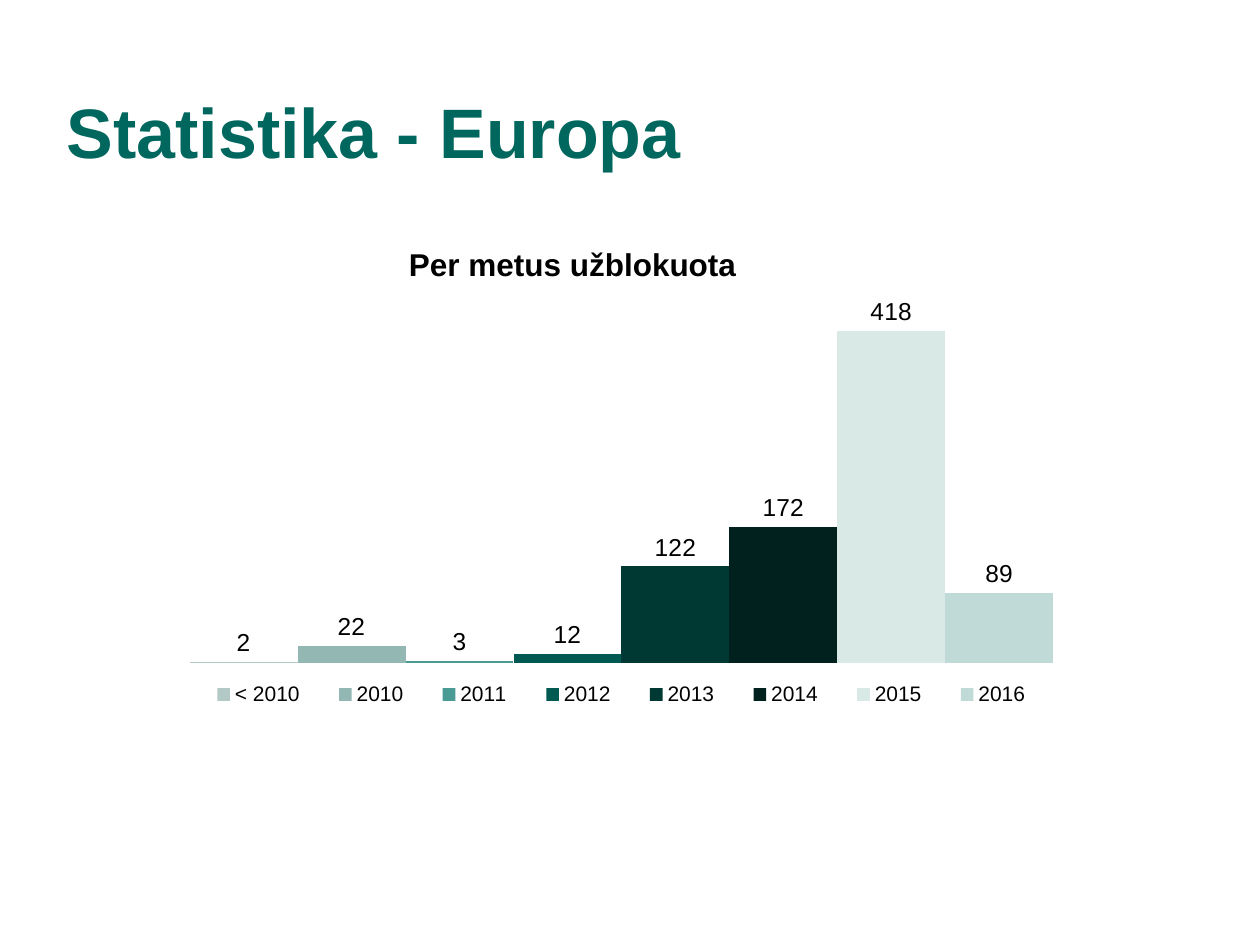
from lxml import etree
from pptx import Presentation
from pptx import util as u
from pptx.chart.data import CategoryChartData
from pptx.dml.color import RGBColor
from pptx.enum import chart as ch, text
from pptx.oxml import ns

SCALE = 914400 / 126
GREEN = RGBColor(0x00, 0x67, 0x5E)
BLACK = RGBColor(0x00, 0x00, 0x00)
YEARS = [
    ("< 2010", 2, RGBColor(0xB3, 0xC9, 0xC6)),
    ("2010", 22, RGBColor(0x93, 0xB8, 0xB3)),
    ("2011", 3, RGBColor(0x4A, 0x9B, 0x94)),
    ("2012", 12, RGBColor(0x00, 0x5A, 0x52)),
    ("2013", 122, RGBColor(0x00, 0x38, 0x34)),
    ("2014", 172, RGBColor(0x00, 0x21, 0x1D)),
    ("2015", 418, RGBColor(0xD9, 0xE9, 0xE5)),
    ("2016", 89, RGBColor(0xC0, 0xDA, 0xD7)),
]


def px(*lengths):
    return [u.Emu(round(length * SCALE)) for length in lengths]


def set_layout(parent, before, inner=False, **fractions):
    """Place a chart part by fractions of the chart area."""
    for old in parent.findall(ns.qn("c:layout")):
        parent.remove(old)
    layout = etree.Element(ns.qn("c:layout"))
    manual = etree.SubElement(layout, ns.qn("c:manualLayout"))
    values = {"layoutTarget": "inner"} if inner else {}
    values |= {"xMode": "edge", "yMode": "edge"} | fractions
    for tag, value in values.items():
        etree.SubElement(manual, ns.qn(f"c:{tag}")).set("val", str(value))
    parent.find(ns.qn(before)).addprevious(layout)


presentation = Presentation()
presentation.slide_width, presentation.slide_height = px(1260, 945)
slide = presentation.slides.add_slide(presentation.slide_layouts[5])

# Slide title
title = slide.shapes.title
title.left, title.top, title.width, title.height = px(54, 76, 1134, 136)
frame = title.text_frame
frame.text = "Statistika - Europa"
frame.vertical_anchor = text.MSO_ANCHOR.TOP
frame.margin_top = px(13)[0]
paragraph = frame.paragraphs[0]
paragraph.alignment = text.PP_ALIGN.LEFT
for name, value in {"name": "Arial", "size": u.Pt(40), "bold": True}.items():
    setattr(paragraph.font, name, value)
paragraph.font.color.rgb = GREEN

# Column chart, one series per year
chart_data = CategoryChartData()
chart_data.categories = ["1"]
for year, count, color in YEARS:
    chart_data.add_series(year, [count])
chart = slide.shapes.add_chart(
    ch.XL_CHART_TYPE.COLUMN_CLUSTERED, *px(76, 212, 1091, 519), chart_data
).chart
chart.font.name = "Arial"
chart.font.size = u.Pt(14)
chart.font.color.rgb = BLACK

plot = chart.plots[0]
plot.gap_width = 150
plot.overlap = 0
plot.vary_by_categories = False
for series, (year, count, color) in zip(plot.series, YEARS):
    series.format.fill.solid()
    series.format.fill.fore_color.rgb = color
    series.data_labels.show_value = True
    series.data_labels.position = ch.XL_LABEL_POSITION.OUTSIDE_END

# Hidden axes
chart.value_axis.minimum_scale = 0
chart.value_axis.maximum_scale = 450
for axis in (chart.category_axis, chart.value_axis):
    axis.has_major_gridlines = False
    axis.visible = False

# Chart title
chart.has_title = True
chart_title = chart.chart_title
chart_title.text_frame.text = "Per metus užblokuota"
title_font = chart_title.text_frame.paragraphs[0].runs[0].font
for name, value in {"name": "Arial", "size": u.Pt(18), "bold": True}.items():
    setattr(title_font, name, value)
title_font.color.rgb = BLACK

# Legend
chart.has_legend = True
legend = chart.legend
legend.position = ch.XL_LEGEND_POSITION.BOTTOM
legend.include_in_layout = False
legend.font.name = "Arial"
legend.font.size = u.Pt(12)
legend.font.color.rgb = BLACK

# Positions inside the chart
chart_area = chart.element.find(ns.qn("c:chart"))
title_part = chart_area.find(ns.qn("c:title"))
title_part.find(ns.qn("c:overlay")).set("val", "1")
set_layout(title_part, "c:overlay", x=0.3, y=0.05)
set_layout(chart_area.find(ns.qn("c:plotArea")), "c:barChart", inner=True,
           x=0.03, y=0.18, w=0.94, h=0.69)
set_layout(chart_area.find(ns.qn("c:legend")), "c:overlay",
           x=0.1, y=0.9, w=0.8, h=0.06)

presentation.save("out.pptx")
